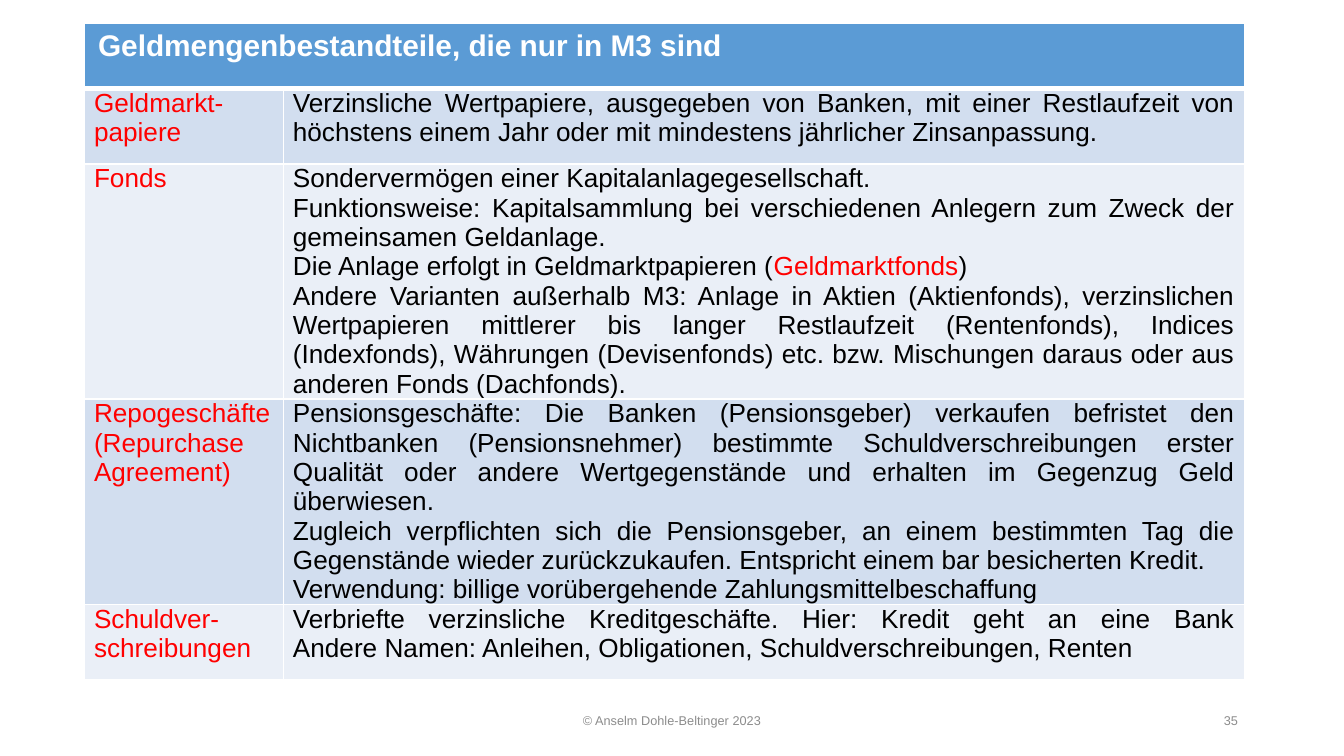
from lxml import etree
from pptx import Presentation
from pptx.dml.color import RGBColor
from pptx.enum.text import MSO_ANCHOR, PP_ALIGN
from pptx.oxml.ns import qn
from pptx.util import Inches, Pt

LEFT, CENTER = PP_ALIGN.LEFT, PP_ALIGN.CENTER
RIGHT, JUSTIFY = PP_ALIGN.RIGHT, PP_ALIGN.JUSTIFY
MIDDLE = MSO_ANCHOR.MIDDLE

WHITE = RGBColor(0xFF, 0xFF, 0xFF)
BLACK = RGBColor(0x00, 0x00, 0x00)
RED = RGBColor(0xFF, 0x00, 0x00)
GRAY = RGBColor(0x8C, 0x8C, 0x8C)
HEADER_BLUE = RGBColor(0x5B, 0x9B, 0xD5)
BANDS = [RGBColor(0xD2, 0xDE, 0xEF), RGBColor(0xEA, 0xEF, 0xF7)]


def write(frame, paragraphs, size=14, color=BLACK, bold=False, align=JUSTIFY):
    """Fill a frame; *marked* parts turn red and a newline breaks the line."""
    for i, text in enumerate(paragraphs):
        paragraph = frame.paragraphs[0] if i == 0 else frame.add_paragraph()
        paragraph.alignment = align
        for j, part in enumerate(text.split("*")):
            for k, line in enumerate(part.split("\n")):
                if k:
                    paragraph.add_line_break()
                run = paragraph.add_run()
                run.text = line
                run.font.name = "Arial"
                run.font.size = Pt(size)
                run.font.bold = bold
                run.font.color.rgb = RED if j % 2 else color


def set_borders(cell, top=1, bottom=1):
    """Draw white lines around a cell, widths in points."""
    properties = cell._tc.get_or_add_tcPr()
    for side, width in (("L", 1), ("R", 1), ("T", top), ("B", bottom)):
        line = etree.SubElement(properties, qn(f"a:ln{side}"), w=str(Pt(width)))
        fill = etree.SubElement(line, qn("a:solidFill"))
        etree.SubElement(fill, qn("a:srgbClr"), val=str(WHITE))


TITLE = "Geldmengenbestandteile, die nur in M3 sind"
COMPONENTS = [
    (["Geldmarkt-papiere"],
     ["Verzinsliche Wertpapiere, ausgegeben von Banken, mit einer Restlaufzeit "
      "von höchstens einem Jahr oder mit mindestens jährlicher Zinsanpassung."]),
    (["Fonds"],
     ["Sondervermögen einer Kapitalanlagegesellschaft.",
      "Funktionsweise: Kapitalsammlung bei verschiedenen Anlegern zum Zweck der "
      "gemeinsamen Geldanlage.",
      "Die Anlage erfolgt in Geldmarktpapieren (*Geldmarktfonds*)",
      "Andere Varianten außerhalb M3: Anlage in Aktien (Aktienfonds), "
      "verzinslichen Wertpapieren mittlerer bis langer Restlaufzeit "
      "(Rentenfonds), Indices (Indexfonds), Währungen (Devisenfonds) etc. bzw. "
      "Mischungen daraus oder aus anderen Fonds (Dachfonds)."]),
    (["Repogeschäfte", "(Repurchase Agreement)"],
     ["Pensionsgeschäfte: Die Banken (Pensionsgeber) verkaufen befristet den "
      "Nichtbanken (Pensionsnehmer) bestimmte Schuldverschreibungen erster "
      "Qualität oder andere Wertgegenstände und erhalten im Gegenzug Geld "
      "überwiesen. ",
      "Zugleich verpflichten sich die Pensionsgeber, an einem bestimmten Tag die "
      "Gegenstände wieder zurückzukaufen. Entspricht einem bar besicherten "
      "Kredit.",
      "Verwendung: billige vorübergehende Zahlungsmittelbeschaffung"]),
    (["Schuldver-schreibungen"],
     ["Verbriefte verzinsliche Kreditgeschäfte. Hier: Kredit geht an eine Bank\n"
      "Andere Namen: Anleihen, Obligationen, Schuldverschreibungen, Renten"]),
]
COLUMN_WIDTHS = [1.48, 7.15]
ROW_HEIGHTS = [0.49, 0.56, 1.68, 1.44, 0.56]

# Slide in 16:9
prs = Presentation()
prs.slide_width = Inches(10)
prs.slide_height = Inches(10) * 9 // 16
slide = prs.slides.add_slide(prs.slide_layouts[6])

# Table grid
table = slide.shapes.add_table(
    len(ROW_HEIGHTS), len(COLUMN_WIDTHS), Inches(0.63), Inches(0.17),
    Inches(8.62), Inches(5.1)).table
for column, width in zip(table.columns, COLUMN_WIDTHS):
    column.width = Inches(width)
for row, height in zip(table.rows, ROW_HEIGHTS):
    row.height = Inches(height)

# Header across both columns
table.cell(0, 0).merge(table.cell(0, 1))
for header in table.rows[0].cells:
    set_borders(header, bottom=3)
    header.fill.solid()
    header.fill.fore_color.rgb = HEADER_BLUE
write(table.cell(0, 0).text_frame, [TITLE], size=16, color=WHITE, bold=True,
      align=LEFT)

# Components: red term and its explanation
for r, component in enumerate(COMPONENTS, start=1):
    for c, (paragraphs, color) in enumerate(zip(component, (RED, BLACK))):
        cell = table.cell(r, c)
        cell.margin_left = cell.margin_right = Inches(0.07)
        cell.margin_top = cell.margin_bottom = 0
        set_borders(cell, top=3 if r == 1 else 1)
        cell.fill.solid()
        cell.fill.fore_color.rgb = BANDS[(r - 1) % 2]
        write(cell.text_frame, paragraphs, color=color)

# Footer and page number
for text, left, width, align in (
        ("© Anselm Dohle-Beltinger 2023", 3.31, 3.38, CENTER),
        ("35", 7.06, 2.25, RIGHT)):
    footer = slide.shapes.add_textbox(
        Inches(left), Inches(5.21), Inches(width), Inches(0.3)).text_frame
    footer.word_wrap = True
    footer.vertical_anchor = MIDDLE
    write(footer, [text], size=6.8, color=GRAY, align=align)

prs.save("out.pptx")
